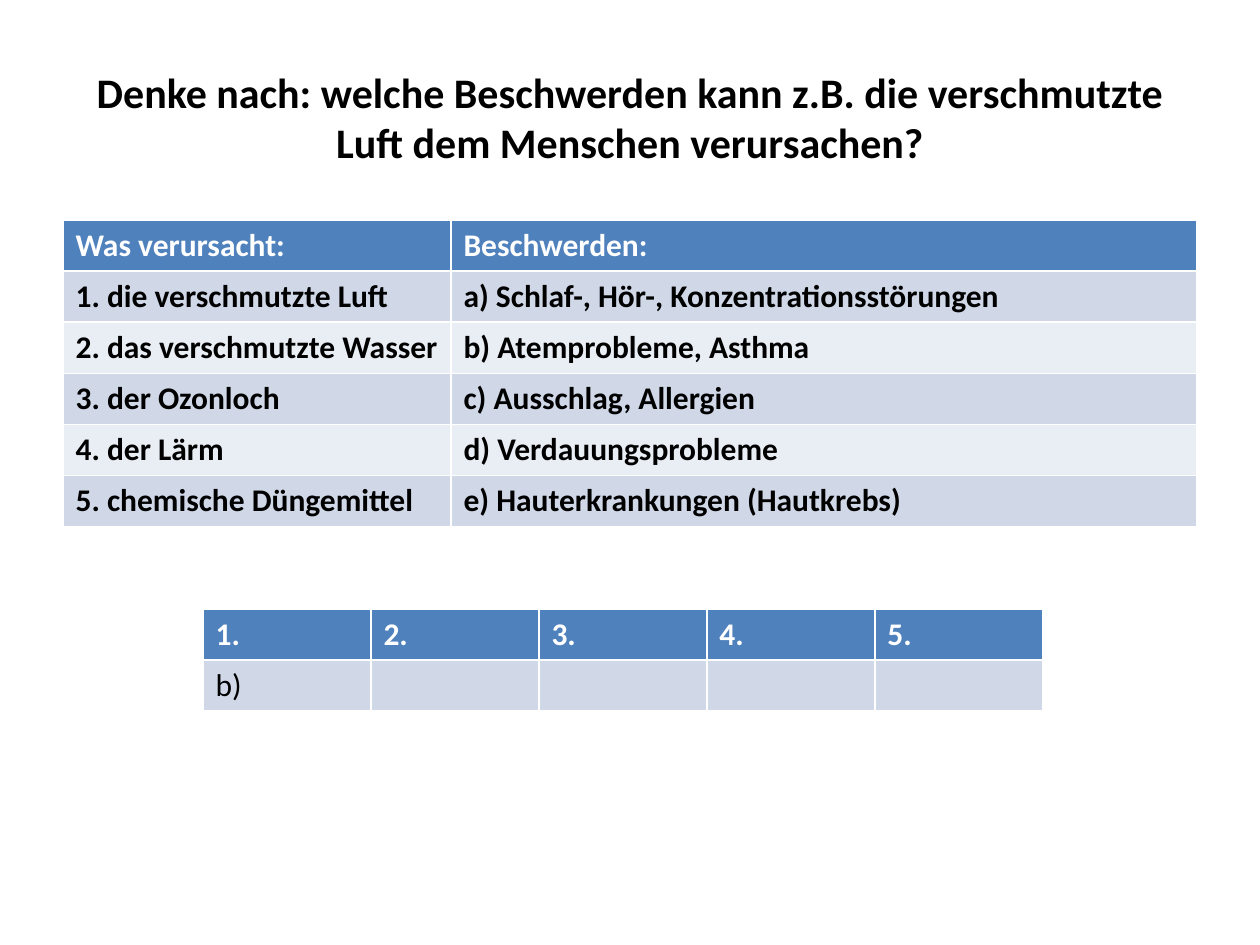
from pptx import Presentation
from pptx.dml.color import RGBColor
from pptx.enum.text import MSO_ANCHOR as Anchor, PP_ALIGN as Align
from pptx.util import Emu, Pt

PX_PER_INCH = 126
FONT = "Calibri"
BLACK, WHITE = "000000", "FFFFFF"
HEADER_FILL = "4F81BD"
BAND_FILLS = ("E9EDF4", "D0D8E8")
ROW_HEIGHT = 51

QUESTION = "Denke nach: welche Beschwerden kann z.B. die verschmutzte Luft dem Menschen verursachen?"
COMPLAINTS = [
    ("Was verursacht:", "Beschwerden:"),
    ("1. die verschmutzte Luft", "a) Schlaf-, Hör-, Konzentrationsstörungen"),
    ("2. das verschmutzte Wasser", "b) Atemprobleme, Asthma"),
    ("3. der Ozonloch", "c) Ausschlag, Allergien"),
    ("4. der Lärm", "d) Verdauungsprobleme"),
    ("5. chemische Düngemittel", "e) Hauterkrankungen (Hautkrebs)"),
]
ANSWERS = [("1.", "2.", "3.", "4.", "5."), ("b)", "", "", "", "")]


def px(length):
    """Turn pixels into EMU."""
    return Emu(round(length * 914400 / PX_PER_INCH))


def color(hex_code):
    """Turn a hex string into a colour."""
    return RGBColor.from_string(hex_code)


def style_font(paragraph, size, hex_code, bold):
    """Set the font of a whole paragraph."""
    font = paragraph.font
    font.name, font.size, font.bold = FONT, Pt(size), bold
    font.color.rgb = color(hex_code)


def place_title(slide, left, top, width, height):
    """Place the question in the title placeholder."""
    title = slide.shapes.title
    title.left, title.top = px(left), px(top)
    title.width, title.height = px(width), px(height)
    title.text_frame.text = QUESTION
    title.text_frame.vertical_anchor = Anchor.MIDDLE
    question = title.text_frame.paragraphs[0]
    question.alignment = Align.CENTER
    style_font(question, 24, BLACK, True)


def add_banded_table(slide, left, top, column_widths, rows, bold_body):
    """Add a table with a blue header and banded rows."""
    table = slide.shapes.add_table(
        len(rows), len(column_widths), px(left), px(top),
        px(sum(column_widths)), px(ROW_HEIGHT * len(rows))).table
    for column, width in zip(table.columns, column_widths):
        column.width = px(width)
    for row_index, entries in enumerate(rows):
        is_header = row_index == 0
        for column_index, entry in enumerate(entries):
            cell = table.cell(row_index, column_index)
            cell.fill.solid()
            cell.fill.fore_color.rgb = color(
                HEADER_FILL if is_header else BAND_FILLS[row_index % 2])
            cell.text = entry
            style_font(cell.text_frame.paragraphs[0], 18,
                       WHITE if is_header else BLACK, is_header or bold_body)


def main():
    """Build and save the slide."""
    deck = Presentation()
    deck.slide_width, deck.slide_height = px(1260), px(945)
    slide = deck.slides.add_slide(deck.slide_layouts[5])
    place_title(slide, 63, 38, 1134, 158)
    add_banded_table(slide, 63, 220, [388, 746], COMPLAINTS, True)
    add_banded_table(slide, 203, 609, [168] * 5, ANSWERS, False)
    deck.save("out.pptx")


if __name__ == "__main__":
    main()
